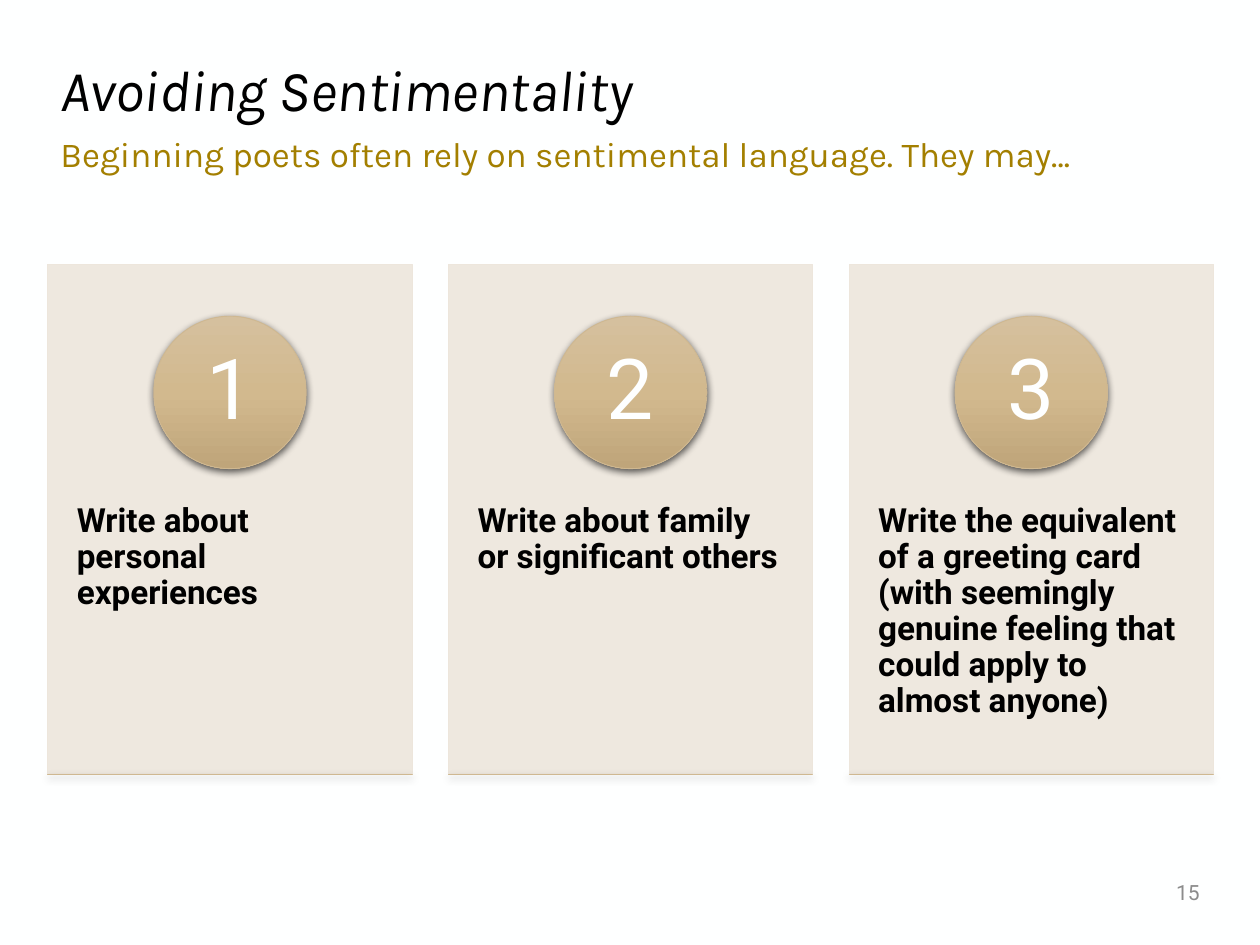
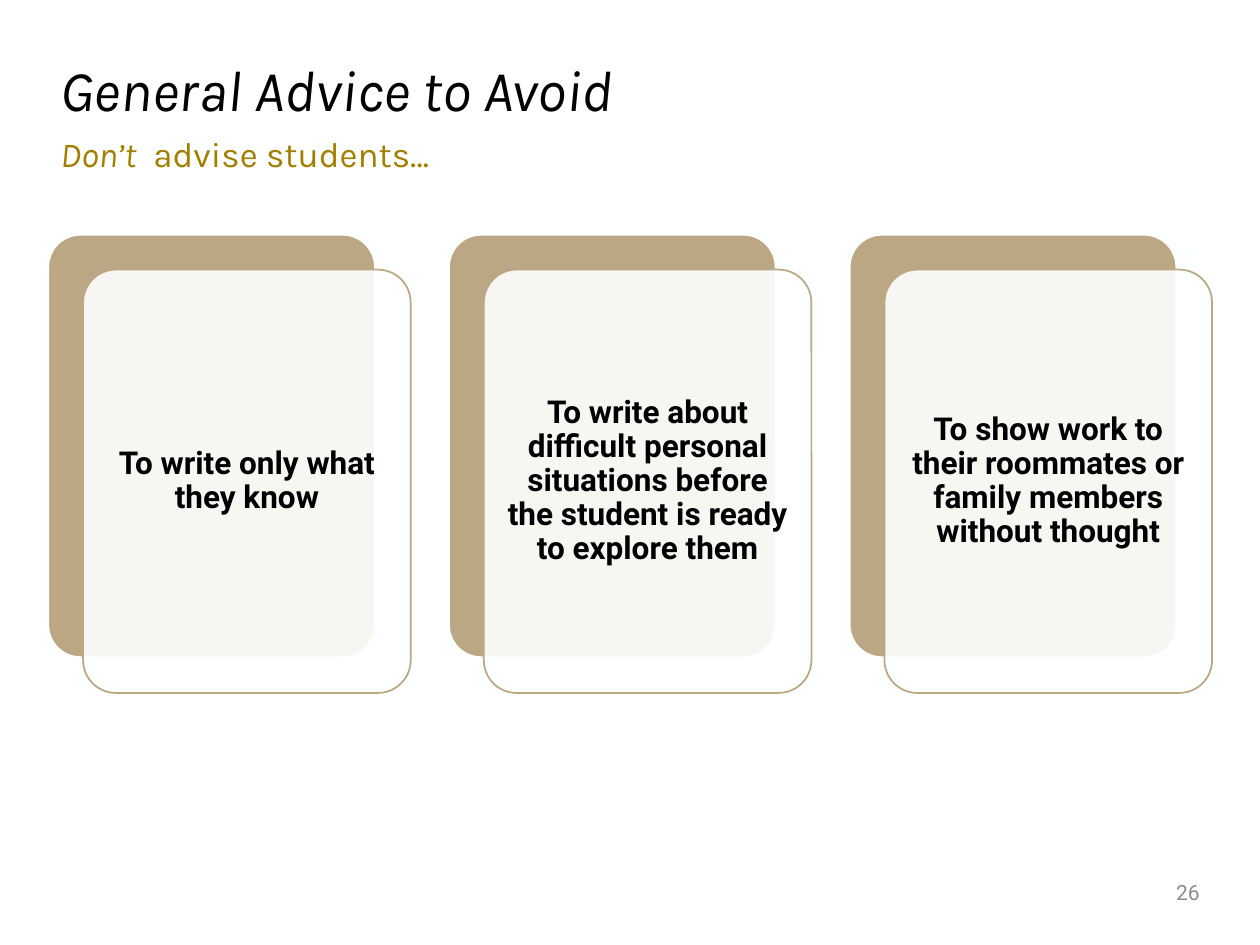
from lxml import etree
from pptx import Presentation
from pptx import util as u
from pptx.dml.color import RGBColor
from pptx.enum import shapes, text
from pptx.oxml import parse_xml
from pptx.oxml.ns import nsdecls, qn

COLORS = {
    "paper": "FEFFFF", "ink": "000000", "subtitle": "A37F00", "number": "8C8C8C",
    "panel": "EDE6DC", "card": "BCA784", "rim": "CFB891", "shadow": "000000",
    "light": "D5C09E", "middle": "D2B98E", "dark": "BFA57A",
}
HEADING, BODY = "Karla", "Roboto"
GRID_COLUMNS = 100
FIRST_COLUMN, COLUMN_STEP = 3.8, 31.8
GOLD = [(0, "light"), (50, "middle"), (100, "dark")]


def rgb(name):
    return RGBColor.from_string(COLORS[name])


class Deck:
    def __init__(self):
        self.presentation = Presentation()
        self.presentation.slide_width = u.Inches(10)
        self.presentation.slide_height = u.Inches(7.5)
        self.cell = self.presentation.slide_width / GRID_COLUMNS
        background = self.presentation.slide_master.background.fill
        background.solid()
        background.fore_color.rgb = rgb("paper")
        self.slide = None

    def length(self, cells):
        return u.Emu(round(cells * self.cell))

    def box(self, *cells):
        return [self.length(value) for value in cells]

    def column(self, index):
        return FIRST_COLUMN + index * COLUMN_STEP

    def start(self, title, subtitle, number):
        layout = self.presentation.slide_layouts[1]
        self.slide = self.presentation.slides.add_slide(layout)
        self.placeholder(0, (3.8, 4.2, 92.4, 6.4), [(title, True)], 33, "ink", "MIDDLE")
        self.placeholder(1, (3.8, 10.4, 92.5, 4), subtitle, 20, "subtitle", "TOP")
        page = self.slide.shapes.add_textbox(*self.box(84.2, 68.8, 12, 4))
        self.set_text(page, [(number, False)], 12, "number", align="RIGHT")

    def placeholder(self, index, cells, runs, size, color, anchor):
        shape = self.slide.placeholders[index]
        shape.left, shape.top, shape.width, shape.height = self.box(*cells)
        properties = shape.text_frame.paragraphs[0]._p.get_or_add_pPr()
        properties.set("marL", "0")
        properties.set("indent", "0")
        etree.SubElement(properties, qn("a:buNone"))
        self.set_text(shape, runs, size, color, HEADING, anchor=anchor, spacing=0.9)

    def set_text(self, shape, runs, size, color, font=BODY, bold=False,
                 align="LEFT", anchor="MIDDLE", insets=(1, 0.5, 1, 0.5), spacing=1.0):
        frame = shape.text_frame
        frame.word_wrap = True
        frame.auto_size = text.MSO_AUTO_SIZE.NONE
        frame.vertical_anchor = text.MSO_ANCHOR[anchor]
        (frame.margin_left, frame.margin_top,
         frame.margin_right, frame.margin_bottom) = self.box(*insets)
        paragraph = frame.paragraphs[0]
        paragraph.alignment = text.PP_ALIGN[align]
        paragraph.line_spacing = spacing
        paragraph.space_before = u.Pt(0)
        paragraph.font.name = font
        paragraph.font.size = u.Pt(size)
        paragraph.font.bold = bold
        paragraph.font.color.rgb = rgb(color)
        for words, italic in runs:
            run = paragraph.add_run()
            run.text = words
            run.font.italic = italic
            if words == " ":
                run._r.get_or_add_rPr().set("spc", "500")

    def shape(self, kind, cells, fill, line, weight, opacity=None):
        shape = self.slide.shapes.add_shape(shapes.MSO_SHAPE[kind], *self.box(*cells))
        shape.shadow.inherit = False
        shape.fill.solid()
        shape.fill.fore_color.rgb = rgb(fill)
        shape.line.color.rgb = rgb(line)
        shape.line.width = u.Pt(weight)
        if opacity:
            color = shape._element.spPr.find(qn("a:solidFill"))[0]
            etree.SubElement(color, qn("a:alpha"), val=str(opacity * 1000))
        if kind == "ROUNDED_RECTANGLE":
            shape.adjustments[0] = 0.1
        return shape

    def gold(self, kind, cells):
        shape = self.shape(kind, cells, "middle", "rim", 0.5)
        properties = shape._element.spPr
        stops = "".join(
            f'<a:gs pos="{position * 1000}"><a:srgbClr val="{COLORS[name]}"/></a:gs>'
            for position, name in GOLD)
        gradient = parse_xml(
            f'<a:gradFill {nsdecls("a")} rotWithShape="1"><a:gsLst>{stops}</a:gsLst>'
            '<a:lin ang="5400000" scaled="0"/></a:gradFill>')
        properties.replace(properties.find(qn("a:solidFill")), gradient)
        properties.find(qn("a:effectLst")).append(parse_xml(
            f'<a:outerShdw {nsdecls("a")} blurRad="{u.Pt(4.5)}" dist="{u.Pt(1.5)}" '
            f'dir="5400000" rotWithShape="0"><a:srgbClr val="{COLORS["shadow"]}">'
            '<a:alpha val="63000"/></a:srgbClr></a:outerShdw>'))
        return shape

    def numbered_panel(self, index, words):
        left = self.column(index)
        panel = self.shape("RECTANGLE", (left, 21, 28.9, 40.4), "panel", "panel", 0.5, 90)
        self.set_text(panel, [(words, False)], 19, "ink", bold=True, anchor="TOP",
                      insets=(2.3, 19, 2.3, 4.3), spacing=0.9)
        disc = self.gold("OVAL", (left + 8.4, 25.1, 12.1, 12.1))
        self.set_text(disc, [(str(index + 1), False)], 48, "paper", align="CENTER",
                      insets=(0.9, 0.1, 0.9, 0.1), spacing=0.9)
        self.gold("RECTANGLE", (left, 61.5, 28.9, 0))

    def layered_card(self, index, words):
        left = self.column(index)
        self.shape("ROUNDED_RECTANGLE", (left, 18.6, 26, 33.6), "card", "paper", 1.5)
        front = self.shape("ROUNDED_RECTANGLE", (left + 2.8, 21.4, 26, 33.6),
                           "paper", "card", 1, 90)
        self.set_text(front, [(words, False)], 18, "ink", bold=True, align="CENTER",
                      insets=(0.7,) * 4, spacing=0.9)


def main():
    deck = Deck()
    deck.start("Avoiding Sentimentality",
               [("Beginning poets often rely on sentimental language. They may…", False)], "15")
    habits = [
        "Write about personal experiences",
        "Write about family or significant others",
        "Write the equivalent of a greeting card (with seemingly genuine feeling "
        "that could apply to almost anyone)",
    ]
    for index, habit in enumerate(habits):
        deck.numbered_panel(index, habit)

    deck.start("General Advice to Avoid",
               [("Don’t", True), (" ", False), ("advise students…", False)], "26")
    advice = [
        "To write only what they know",
        "To write about difficult personal situations before the student is ready "
        "to explore them",
        "To show work to their roommates or family members without thought",
    ]
    for index, words in enumerate(advice):
        deck.layered_card(index, words)
    deck.presentation.save("out.pptx")


if __name__ == "__main__":
    main()
